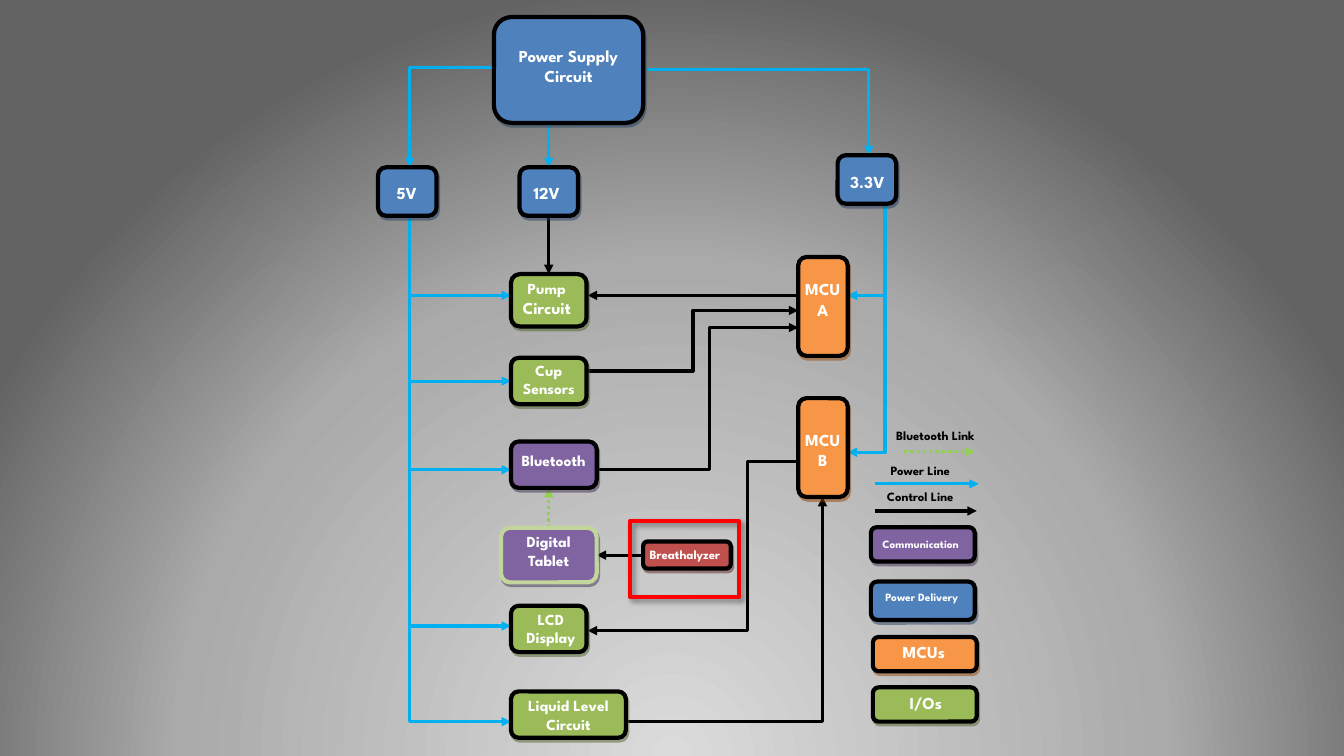
"""Build the power and control block diagram slide."""
from itertools import cycle, pairwise
from pptx import Presentation
from pptx.dml.color import RGBColor
from pptx.enum.dml import MSO_LINE_DASH_STYLE as DASH
from pptx.enum.shapes import MSO_CONNECTOR as CONN, MSO_SHAPE as SHAPE
from pptx.enum.text import PP_ALIGN
from pptx.oxml import parse_xml
from pptx.oxml.ns import nsdecls, qn
from pptx.util import Pt

THEME = {
    "font": "League Spartan", "white": "FFFFFF", "black": "000000", "alert": "FF0000",
    "line_w": 2.25, "border_w": 3, "small": 8, "key": 9, "body": 11, "large": 12,
    "sky": [(0, "DBDBDB"), (64, "AAAAAA"), (100, "636363")],
    "wires": {"power": "00B0F0", "control": "000000", "radio": "92D050"},
    "kinds": {
        "power": ("4F81BD", "000000", "243F60"), "mcu": ("F79646", "000000", "974706"),
        "io": ("9BBB59", "000000", "4E6128"), "comm": ("8064A2", "000000", "3F3151"),
        "tablet": ("8064A2", "C2D69B", "3F3151"), "sensor": ("C0504D", "000000", "622423"),
    },
}
SMALL, KEY, BODY, LARGE = (THEME[k] for k in ("small", "key", "body", "large"))

# name: (kind, box, label lines, label frame, label sizes, space after)
BLOCKS = {
    "mcu_a": ("mcu", (570.2, 183.6, 35.3, 70.6), ["MCU", "A"], (555, 195.8, 65.5, 46), [LARGE], 0),
    "mcu_b": ("mcu", (570.2, 284.4, 35.3, 70.6), ["MCU", "B"], (555, 303.1, 65.5, 42.5), [LARGE], 0),
    "pump": ("io", (365, 195.8, 54, 37.4), ["Pump", "Circuit"], (357.8, 195.8, 65.5, 46), [BODY, LARGE], 0),
    "cup": ("io", (365, 255.6, 54, 33.1), ["Cup", "Sensors"], (357.8, 254.2, 68.4, 46), [BODY], 0),
    "bluetooth": ("comm", (365, 315.4, 61.2, 33.1), ["Bluetooth"], (360.7, 319, 69.8, 46), [BODY], 0),
    "lcd": ("io", (365, 432.7, 54, 33.1), ["LCD", "Display"], (360.7, 432, 65.5, 47.5), [BODY], 0),
    "liquid": ("io", (365, 493.9, 82.1, 33.1), ["Liquid Level Circuit"], (365, 493.9, 82.1, 46), [BODY], 0),
    "tablet": ("tablet", (357.8, 377, 68.4, 39), ["Digital", "Tablet"], (357.8, 376.6, 68.4, 46), [BODY], 0),
    "v5": ("power", (270, 119.5, 41.8, 34.6), ["5V"], (257.8, 126.7, 65.5, 27.4), [LARGE], 10),
    "supply": ("power", (352.8, 12.2, 106.6, 75.6), ["Power Supply Circuit"], (352.8, 28.8, 106.6, 59), [LARGE], 10),
    "v12": ("power", (371.1, 119.5, 41.8, 34.6), ["12V"], (357.8, 126.7, 65.5, 27.4), [LARGE], 10),
    "v33": ("power", (598.3, 110.9, 41.8, 34.6), ["3.3V"], (586.8, 118.8, 65.5, 27.4), [LARGE], 10),
    "breath": ("sensor", (459.4, 386.8, 62.6, 19.4), ["Breathalyzer"], (451.4, 387.4, 75.6, 34.6), [KEY], 0),
    "key_power": ("power", (622.1, 415.4, 74.2, 27.4), ["Power Delivery"], (617.8, 418.3, 81.4, 31.7), [SMALL], 10),
    "key_io": ("io", (623.5, 491, 74.2, 24.5), ["I/Os"], (625, 491, 72.7, 30.2), [LARGE], 10),
    "key_mcu": ("mcu", (623.5, 455, 74.2, 24.5), ["MCUs"], (623.5, 455, 72.7, 32.4), [LARGE], 10),
    "key_comm": ("comm", (622.1, 376.6, 74.2, 24.5), ["Communication"], (616.3, 380.2, 82.8, 28.1), [SMALL], 10),
}
KEY_TEXTS = [("Power Line", 605.5, 326.9), ("Control Line", 605.5, 345.6), ("Bluetooth Link", 616.3, 302.4)]
ALERT_FRAME = (450, 372.2, 77.8, 54)

RAIL_5V, FEED_END, FEED_YS = 292.7, 365, [154.1, 211, 272.2, 335.5, 447.1, 515.5]
RAIL_33V, MCU_RIGHT, MCU_YS = 632.2, 605.5, [146.2, 211, 323]

# wire, start, end, position of the bend (None is straight), joined blocks
WIRES = [
    ("power", (392, 87.8), (392, 119.5), None, (None, ("v12", 0))),
    ("power", (463, 49.7), (620.6, 110.9), 1, ()),
    ("power", (352.8, 48.5), (RAIL_5V, 119.5), 1, ()),
    ("control", (392, 154.1), (392, 195.8), None, (("v12", 2), ("pump", 0))),
    ("control", (570.2, 211), (419.8, 211), None, ()),
    ("control", (419.8, 265), (570.2, 221.8), 0.5, ()),
    ("control", (419.8, 335.5), (570.2, 234), 0.58, ()),
    ("control", (570.2, 329.8), (419.8, 450.4), 0.24, ()),
    ("control", (447.1, 515.5), (587.5, 355), 1, ()),
    ("radio", (392, 377), (392, 348.5), None, (("tablet", 0), None)),
    ("control", (459.4, 396.5), (426.2, 396.5), None, (("breath", 1), ("tablet", 3))),
    ("control", (625, 365), (697.7, 365), None, ()),
    ("power", (625, 345.6), (699.1, 345.6), None, ()),
    ("radio", (645.8, 322.6), (696.2, 322.6), None, ()),
]
WIRES += [("power", (RAIL_5V, a), (FEED_END, b), 0, ()) for a, b in pairwise(FEED_YS)]
WIRES += [("power", (RAIL_33V, a), (MCU_RIGHT, b), 0, ()) for a, b in pairwise(MCU_YS)]


def rgb(value):
    """Return a colour object."""
    return RGBColor.from_string(value)


def paint_background(s):
    """Fill the slide with a radial gradient centred below its foot."""
    stops = "".join(f'<a:gs pos="{p * 1000}"><a:srgbClr val="{c}"/></a:gs>' for p, c in THEME["sky"])
    bg = parse_xml(
        f'<p:bg {nsdecls("p", "a")}><p:bgPr><a:gradFill rotWithShape="1"><a:gsLst>{stops}</a:gsLst>'
        '<a:path path="circle"><a:fillToRect l="50000" t="130000" r="50000" b="-30000"/></a:path>'
        '</a:gradFill><a:effectLst/></p:bgPr></p:bg>')
    s.element.cSld.insert(0, bg)


def add_box(s, preset, frame, fill, border, shadow):
    """Add an outlined shape with an outer shadow."""
    sp = s.shapes.add_shape(preset, *map(Pt, frame))
    if fill:
        sp.fill.solid()
        sp.fill.fore_color.rgb = rgb(fill)
    else:
        sp.fill.background()
    sp.line.color.rgb = rgb(border)
    sp.line.width = Pt(THEME["border_w"])
    sp.shadow.inherit = False
    color, alpha, blur, dist, angle = shadow
    sp.element.spPr.find(qn("a:effectLst")).append(parse_xml(
        f'<a:outerShdw {nsdecls("a")} blurRad="{Pt(blur)}" dist="{Pt(dist)}" dir="{angle * 60000}" '
        f'algn="tl" rotWithShape="0"><a:srgbClr val="{color}"><a:alpha val="{alpha * 1000}"/>'
        '</a:srgbClr></a:outerShdw>'))
    return sp


def add_label(s, frame, lines, sizes, color, after):
    """Add centred bold text, one paragraph a line."""
    tf = s.shapes.add_textbox(*map(Pt, frame)).text_frame
    tf.word_wrap = True
    for i, (text, size) in enumerate(zip(lines, cycle(sizes))):
        p = tf.add_paragraph() if i else tf.paragraphs[0]
        p.alignment, p.space_after = PP_ALIGN.CENTER, Pt(after)
        r = p.add_run()
        r.text = text
        r.font.color.rgb = rgb(color)
        for name, value in {"name": THEME["font"], "size": Pt(size), "bold": True}.items():
            setattr(r.font, name, value)


def add_wire(s, boxes, wire, start, end, bend, joins):
    """Add an arrow, bent at a share of its width, and join it to blocks."""
    kind = CONN.STRAIGHT if bend is None else CONN.ELBOW
    c = s.shapes.add_connector(kind, *map(Pt, start + end))
    for join, connect in zip(joins, (c.begin_connect, c.end_connect)):
        if join:
            connect(boxes[join[0]], join[1])
    c.line.color.rgb = rgb(THEME["wires"][wire])
    c.line.width = Pt(THEME["line_w"])
    if wire == "radio":
        c.line.dash_style = DASH.ROUND_DOT
    spPr = c.element.spPr
    spPr.find(qn("a:ln")).append(parse_xml(f'<a:tailEnd {nsdecls("a")} type="triangle"/>'))
    spPr.append(parse_xml(f'<a:effectLst {nsdecls("a")}/>'))
    if bend is not None:
        spPr.find(qn("a:prstGeom")).get_or_add_avLst().append(parse_xml(
            f'<a:gd {nsdecls("a")} name="adj1" fmla="val {round(bend * 100000)}"/>'))
    return c


def main():
    """Build and save the slide."""
    prs = Presentation()
    prs.slide_width, prs.slide_height = Pt(960), Pt(540)
    s = prs.slides.add_slide(prs.slide_layouts[6])
    paint_background(s)
    boxes = {}
    for name, (kind, frame, *_) in BLOCKS.items():
        fill, border, shade = THEME["kinds"][kind]
        boxes[name] = add_box(s, SHAPE.ROUNDED_RECTANGLE, frame, fill, border, (shade, 50, 0, 2.2, 63))
    for wire in WIRES:
        c = add_wire(s, boxes, *wire)
        boxes["mcu_a"].element.addprevious(c.element)
    for _, _, lines, frame, sizes, after in BLOCKS.values():
        add_label(s, frame, lines, sizes, THEME["white"], after)
    for text, left, top in KEY_TEXTS:
        add_label(s, (left, top, 103.7, 27.4), [text], [KEY], THEME["black"], 10)
    add_box(s, SHAPE.RECTANGLE, ALERT_FRAME, None, THEME["alert"], (THEME["black"], 40, 4, 3, 45))
    prs.save("out.pptx")


if __name__ == "__main__":
    main()
